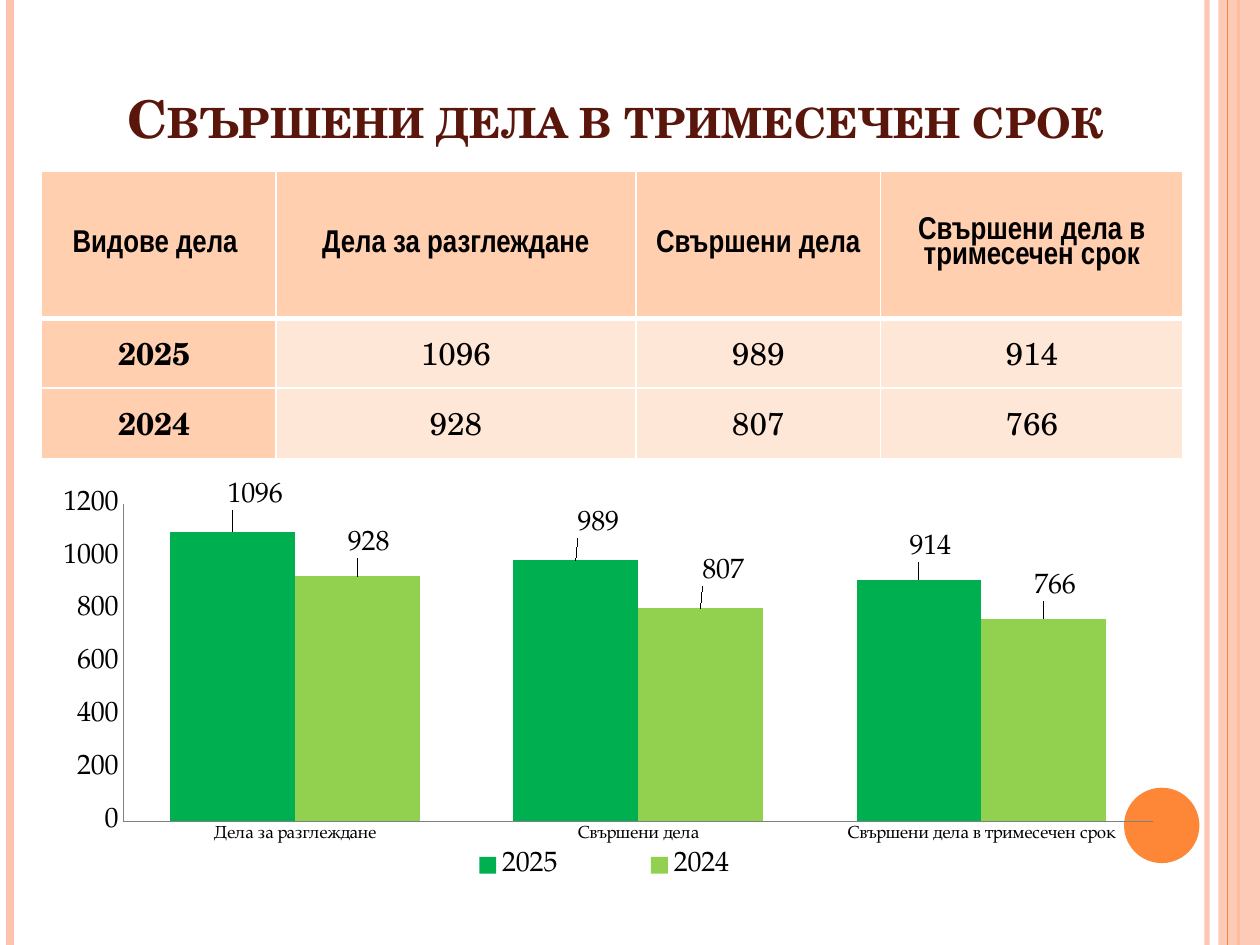
from lxml import etree
from pptx import Presentation
from pptx.chart.data import CategoryChartData
from pptx.dml.color import RGBColor
from pptx.enum.chart import XL_CHART_TYPE, XL_LABEL_POSITION, XL_LEGEND_POSITION, XL_TICK_MARK
from pptx.enum.shapes import MSO_CONNECTOR, MSO_SHAPE
from pptx.enum.text import MSO_ANCHOR, MSO_AUTO_SIZE, PP_ALIGN
from pptx.oxml.ns import qn
from pptx.util import Cm, Pt

COLUMNS = XL_CHART_TYPE.COLUMN_CLUSTERED
OUTSIDE = XL_LABEL_POSITION.OUTSIDE_END
LEGEND_BOTTOM = XL_LEGEND_POSITION.BOTTOM
NO_TICK = XL_TICK_MARK.NONE
STRAIGHT = MSO_CONNECTOR.STRAIGHT
RECTANGLE, OVAL = MSO_SHAPE.RECTANGLE, MSO_SHAPE.OVAL
MIDDLE, BOTTOM = MSO_ANCHOR.MIDDLE, MSO_ANCHOR.BOTTOM
NO_FIT = MSO_AUTO_SIZE.NONE
CENTER = PP_ALIGN.CENTER

SERIF, NARROW, CHART_FONT = "TeX Gyre Schola", "Arial Narrow", "TeX Gyre Pagella"
ORANGE, PINK, BLACK, WHITE = "FE8637", "FEC3AE", "000000", "FFFFFF"
PEACH, PALE_PEACH = "FFCFAF", "FFE7D7"

HEADINGS = ["Дела за разглеждане", "Свършени дела", "Свършени дела в тримесечен срок"]
CASES = {"2025": [1096, 989, 914], "2024": [928, 807, 766]}
SERIES_COLORS = {"2025": "00B050", "2024": "92D050"}
# Label shifts as fractions of the chart
LABEL_SHIFTS = {
    "2025": [(0.02, -0.04), (0.02, -0.04), (0.01, -0.03)],
    "2024": [(0.01, -0.03), (0.02, -0.04), (0.01, -0.03)],
}


def color(value):
    return RGBColor.from_string(value)


def set_font(font, name, size, bold=False, value=BLACK):
    font.name, font.size, font.bold = name, Pt(size), bold
    font.color.rgb = color(value)


def set_alpha(shape, percent):
    for node in shape._element.spPr.iter(qn("a:srgbClr")):
        etree.SubElement(node, qn("a:alpha"), val=str(percent * 1000))


def add_rail(page, x, height, value, width):
    rail = page.shapes.add_connector(STRAIGHT, x, 0, x, height)
    rail.line.color.rgb = color(value)
    rail.line.width = Pt(width)
    etree.SubElement(rail._element.spPr, qn("a:effectLst"))
    return rail


def add_filled(page, kind, box, value):
    shape = page.shapes.add_shape(kind, *box)
    shape.shadow.inherit = False
    shape.fill.solid()
    shape.fill.fore_color.rgb = color(value)
    shape.line.fill.background()
    return shape


def add_frame(page, box):
    """Vertical rails along both edges, and the circle at the lower right."""
    left, top, width, height = box
    right = left + width
    set_alpha(add_rail(page, right - Cm(1.07), height, PINK, 3), 93)
    add_rail(page, left + Cm(0.2), height, PINK, 4.5)
    add_rail(page, right - Cm(0.43), height, ORANGE, 1.5)
    band = Cm(0.84)
    set_alpha(add_filled(page, RECTANGLE, (right - band, top, band, height), PINK), 87)
    add_rail(page, right - Cm(0.65), height, ORANGE, 0.75)
    size = Cm(1.52)
    add_filled(page, OVAL, (right - Cm(2.74), top + Cm(15.88), size, size), ORANGE)


def add_title(page, box):
    title = page.shapes.title
    title.left, title.top, title.width, title.height = box
    frame = title.text_frame
    frame.text = "Свършени дела в тримесечен срок"
    frame.auto_size, frame.vertical_anchor = NO_FIT, BOTTOM
    para = frame.paragraphs[0]
    para.alignment = CENTER
    span = para.runs[0]
    set_font(span.font, SERIF, 29.7, True, "5A160B")
    span.font._element.set("cap", "small")


def set_borders(cell, widths):
    properties = cell._tc.get_or_add_tcPr()
    for side, width in widths.items():
        line = etree.SubElement(properties, qn(f"a:ln{side}"), w=str(Pt(width)))
        fill = etree.SubElement(line, qn("a:solidFill"))
        etree.SubElement(fill, qn("a:srgbClr"), val=WHITE)


def add_case_table(page, box):
    rows = [["Видове дела "] + HEADINGS]
    rows += [[f"{year} "] + values for year, values in CASES.items()]
    table = page.shapes.add_table(len(rows), len(rows[0]), *box).table
    for column, width in zip(table.columns, (4.72, 7.26, 4.93, 6.1)):
        column.width = Cm(width)
    for row, height in zip(table.rows, (2.97, 1.4, 1.42)):
        row.height = Cm(height)
    for i, row in enumerate(rows):
        for j, value in enumerate(row):
            cell = table.cell(i, j)
            header = i == 0
            set_borders(cell, {"L": 1, "R": 1, "T": 3 if i == 1 else 1, "B": 3 if header else 1})
            cell.fill.solid()
            cell.fill.fore_color.rgb = color(PEACH if header or j == 0 else PALE_PEACH)
            cell.margin_left = cell.margin_right = Cm(0.18)
            cell.margin_top = cell.margin_bottom = 0
            cell.vertical_anchor = MIDDLE
            cell.text = str(value)
            para = cell.text_frame.paragraphs[0]
            para.alignment = CENTER
            if header:
                para.line_spacing = 0.85
            set_font(para.runs[0].font, NARROW if header else SERIF, 18, header or j == 0)


def make_layout(target=None, **values):
    layout = etree.Element(qn("c:layout"))
    manual = etree.SubElement(layout, qn("c:manualLayout"))
    if target:
        etree.SubElement(manual, qn("c:layoutTarget"), val=target)
    if "w" in values:
        for mode in ("xMode", "yMode"):
            etree.SubElement(manual, qn(f"c:{mode}"), val="edge")
    for name, value in values.items():
        etree.SubElement(manual, qn(f"c:{name}"), val=str(value))
    return layout


def set_layout(parent, layout, after):
    for old in parent.findall(qn("c:layout")):
        parent.remove(old)
    if after is None:
        parent.insert(0, layout)
    else:
        parent.find(qn(after)).addnext(layout)


def label_series(series):
    labels = series.data_labels
    labels.show_value, labels.position = True, OUTSIDE
    set_font(labels.font, CHART_FONT, 16)
    for i, (x, y) in enumerate(LABEL_SHIFTS[series.name]):
        label = series.points[i].data_label
        label.position = OUTSIDE
        set_font(label.font, CHART_FONT, 16)
    for node, (x, y) in zip(series._element.iter(qn("c:dLbl")), LABEL_SHIFTS[series.name]):
        set_layout(node, make_layout(x=x, y=y), "c:idx")


def add_case_chart(page, box):
    data = CategoryChartData()
    data.categories = HEADINGS
    for year, values in CASES.items():
        data.add_series(year, values)
    chart = page.shapes.add_chart(COLUMNS, *box, data).chart
    set_font(chart.font, SERIF, 10)
    chart.has_title = False

    # Columns and their labels
    plot = chart.plots[0]
    plot.gap_width, plot.overlap, plot.vary_by_categories = 75, 0, False
    for series in plot.series:
        series.format.fill.solid()
        series.format.fill.fore_color.rgb = color(SERIES_COLORS[series.name])
        label_series(series)

    # Axes
    for axis, size in ((chart.category_axis, 10), (chart.value_axis, 16)):
        axis.has_major_gridlines = False
        axis.major_tick_mark = axis.minor_tick_mark = NO_TICK
        axis.format.line.color.rgb = color("808080")
        axis.format.line.width = Pt(0.75)
        set_font(axis.tick_labels.font, CHART_FONT, size)
    chart.value_axis.minimum_scale, chart.value_axis.maximum_scale = 0, 1200
    chart.value_axis.major_unit = 200

    # Legend, and the places inside the chart
    chart.has_legend = True
    legend = chart.legend
    legend.position, legend.include_in_layout = LEGEND_BOTTOM, False
    set_font(legend.font, CHART_FONT, 16)
    set_layout(legend._element, make_layout(x=0.31, y=0.87, w=0.37, h=0.09), "c:legendPos")
    plot_area = chart._chartSpace.chart.plotArea
    set_layout(plot_area, make_layout("inner", x=0.07, y=0.05, w=0.91, h=0.76), None)


def main():
    deck = Presentation()
    deck.slide_width, deck.slide_height = Cm(25.4), Cm(19.05)
    page = deck.slides.add_slide(deck.slide_layouts[5])
    add_frame(page, (0, 0, deck.slide_width, deck.slide_height))
    add_title(page, (Cm(0.71), Cm(1.52), Cm(23.39), Cm(1.6)))
    add_case_table(page, (Cm(0.84), Cm(3.45), Cm(23.01), Cm(5.79)))
    add_case_chart(page, (Cm(0.89), Cm(9.73), Cm(22.81), Cm(8.43)))
    deck.save("out.pptx")


if __name__ == "__main__":
    main()
